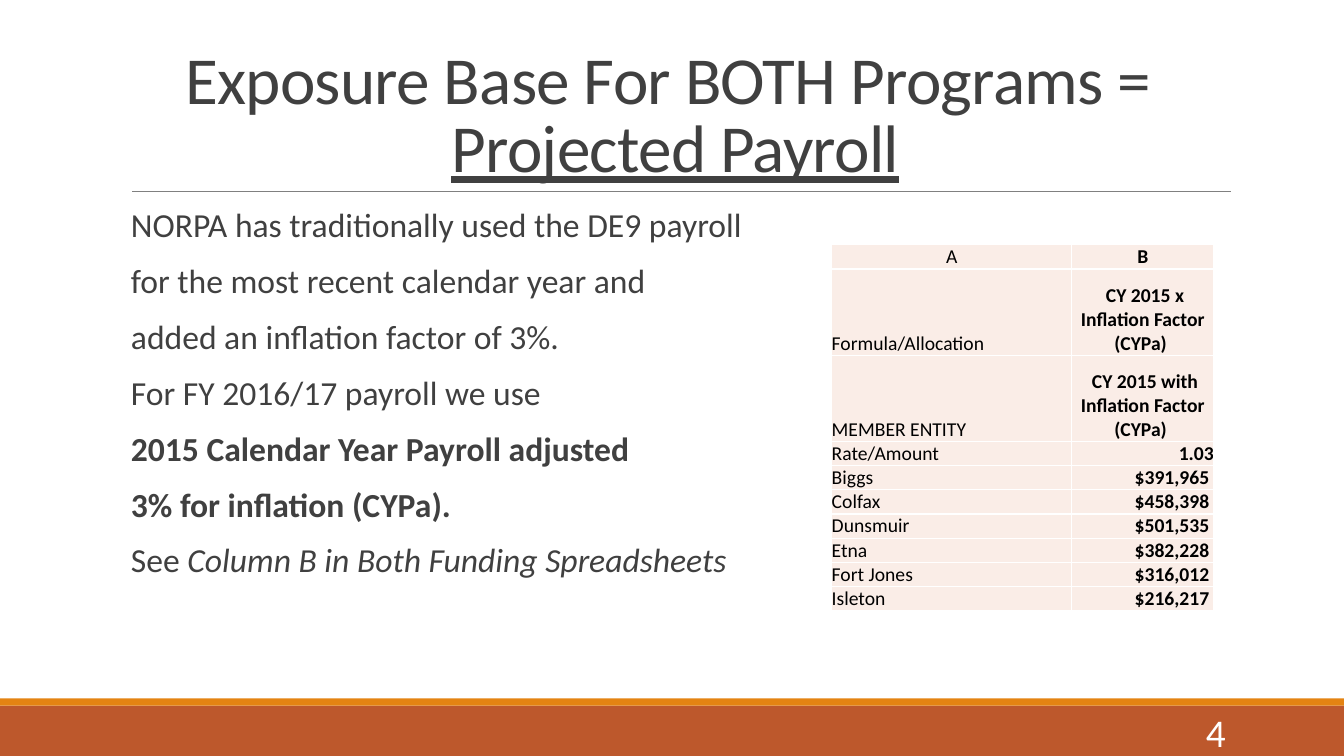
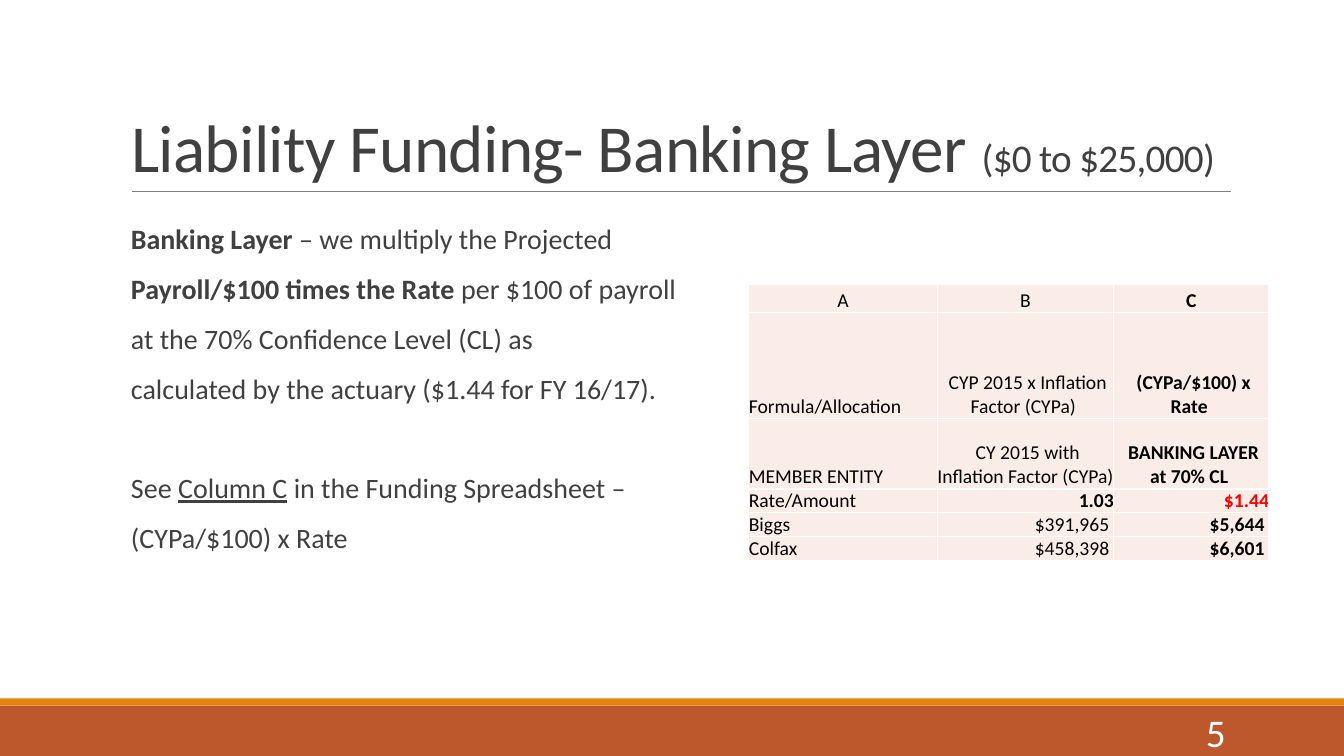
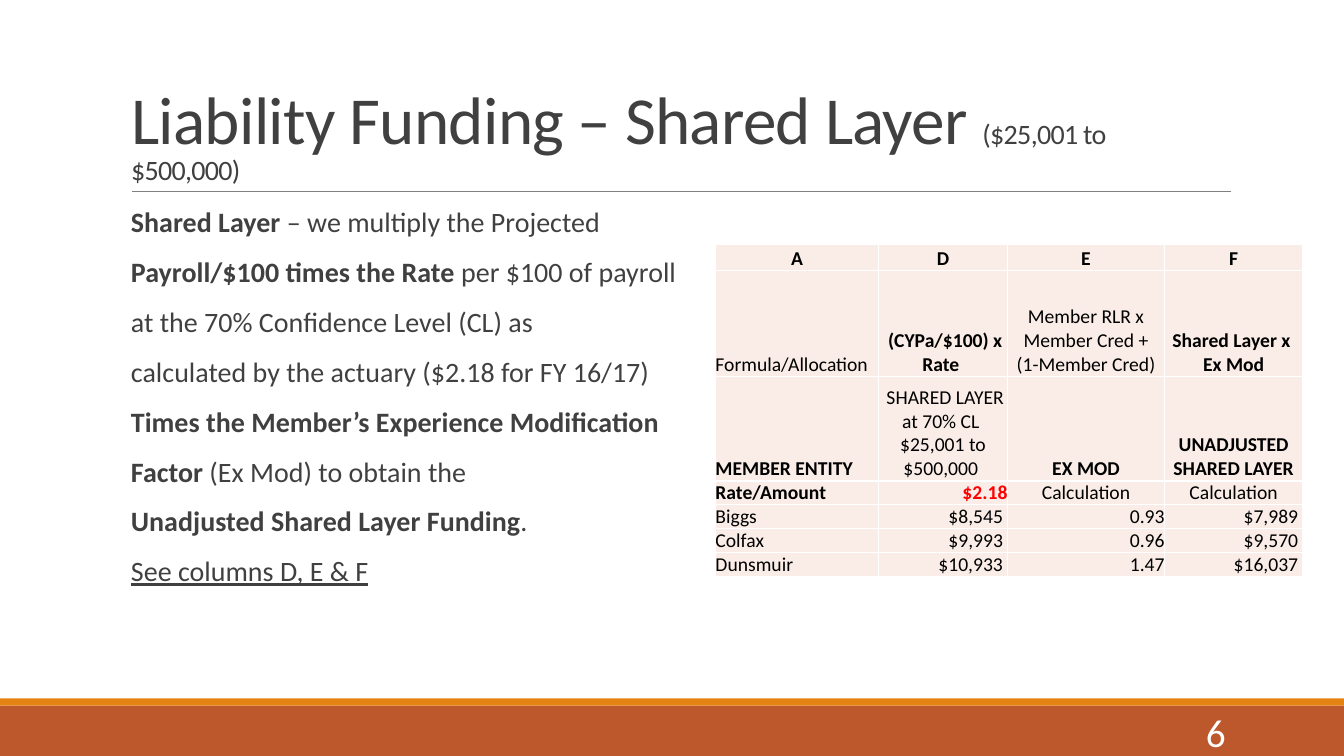
from lxml.etree import SubElement
from pptx import Presentation
from pptx.dml.color import RGBColor
from pptx.enum.shapes import MSO_CONNECTOR as Connector, MSO_SHAPE as Shape
from pptx.enum.text import MSO_ANCHOR as Anchor, MSO_AUTO_SIZE as AutoSize, PP_ALIGN as Align
from pptx.oxml.ns import qn
from pptx.util import Cm, Pt

FONT = "Calibri"
COLORS = {
    "text": "404040",
    "cell_text": "000000",
    "rate": "FF0000",
    "cell": "FAEDE7",
    "band": "BD582C",
    "accent": "E48312",
    "rule": "808080",
    "number": "FFFFFF",
}
FIRST_NUMBER = 4

DECK = [
    {
        "title": ["Exposure Base For BOTH Programs = ", "\v", ("Projected Payroll", "u")],
        "title_align": Align.CENTER,
        "body_top": 5.13,
        "body_size": 24,
        "body": [
            ["NORPA has traditionally used the DE9 payroll"],
            ["for the most recent calendar year and"],
            ["added an inflation factor of 3%."],
            ["For FY 2016/17 payroll we use"],
            [("2015 Calendar Year Payroll adjusted", "b")],
            [("3% for inflation (CYPa).", "b")],
            ["See ", ("Column B in Both Funding Spreadsheets", "i")],
        ],
        "table_at": (20.96, 6.17),
        "columns": [6.05, 3.58],
        "rows": [0.61, 2.18, 2.16] + [0.61] * 7,
        "cells": [
            ["A", (" B ", "b")],
            ["Formula/Allocation", (" CY 2015 x Inflation Factor (CYPa) ", "b")],
            ["MEMBER ENTITY", (" CY 2015 with Inflation Factor (CYPa) ", "b")],
            ["Rate/Amount", ("1.03", "b")],
            ["Biggs", ("$391,965 ", "b")],
            ["Colfax", ("$458,398 ", "b")],
            ["Dunsmuir", ("$501,535 ", "b")],
            ["Etna", ("$382,228 ", "b")],
            ["Fort Jones", ("$316,012 ", "b")],
            ["Isleton", ("$216,217 ", "b")],
        ],
    },
    {
        "title": ["Liability Funding- Banking Layer ", ("($0 to $25,000)", "", 28)],
        "title_align": Align.LEFT,
        "body_top": 5.56,
        "body_size": 20,
        "body": [
            [("Banking Layer ", "b"), "– we multiply the Projected"],
            [("Payroll/$100 times the Rate ", "b"), "per $100 of payroll"],
            ["at the 70% Confidence Level (CL) as"],
            ["calculated by the actuary ($1.44 for FY 16/17)."],
            ["See ", ("Column C", "u"), " in the Funding Spreadsheet –"],
            ["(CYPa/$100) x Rate"],
        ],
        "wide_gap_before": 4,
        "table_at": (18.87, 7.16),
        "columns": [4.75, 4.45, 3.91],
        "rows": [0.71, 2.67, 1.78] + [0.53] * 3,
        "cells": [
            ["A", " B ", (" C ", "b")],
            ["Formula/Allocation", " CYP 2015 x Inflation Factor (CYPa) ",
             (" (CYPa/$100) x Rate ", "b")],
            ["MEMBER ENTITY", " CY 2015 with Inflation Factor (CYPa) ",
             (" BANKING LAYER at 70% CL ", "b")],
            ["Rate/Amount", ("1.03", "b"), ("$1.44", "br")],
            ["Biggs", "$391,965 ", ("$5,644 ", "b")],
            ["Colfax", "$458,398 ", ("$6,601 ", "b")],
        ],
    },
    {
        "title": ["Liability Funding – Shared Layer ", ("($25,001 to $500,000)", "", 20)],
        "title_align": Align.LEFT,
        "body_top": 5.13,
        "body_size": 20,
        "body": [
            [("Shared Layer ", "b"), "– we multiply the Projected"],
            [("Payroll/$100 times the Rate ", "b"), "per $100 of payroll"],
            ["at the 70% Confidence Level (CL) as"],
            ["calculated by the actuary ($2.18 for FY 16/17)"],
            [("Times the Member’s Experience Modification", "b")],
            [("Factor ", "b"), "(Ex Mod) to obtain the"],
            [("Unadjusted Shared Layer Funding", "b"), "."],
            [("See columns D, E & F", "u")],
        ],
        "table_at": (18.03, 6.15),
        "columns": [4.11, 3.25, 3.96, 3.48],
        "rows": [0.66, 2.67, 2.64] + [0.53] * 4,
        "cells": [
            [("A", "b"), (" D ", "b"), (" E ", "b"), (" F ", "b")],
            ["Formula/Allocation", (" (CYPa/$100) x Rate ", "b"),
             "Member RLR x Member Cred +\n(1-Member Cred)", ("Shared Layer x \nEx Mod", "b")],
            [("MEMBER ENTITY", "b"), " SHARED LAYER at 70% CL \n$25,001 to $500,000 ",
             ("EX MOD", "b"), ("UNADJUSTED SHARED LAYER", "b")],
            [("Rate/Amount", "b"), ("$2.18", "br"), "Calculation", "Calculation"],
            ["Biggs", "$8,545 ", "0.93", "$7,989 "],
            ["Colfax", "$9,993 ", "0.96", "$9,570 "],
            ["Dunsmuir", "$10,933 ", "1.47", "$16,037 "],
        ],
    },
]


def color(name):
    return RGBColor.from_string(COLORS[name])


def place(shape, left, top, width, height):
    shape.left, shape.top, shape.width, shape.height = map(Cm, (left, top, width, height))


def split_style(part):
    return (part, "") if isinstance(part, str) else part


def style_font(font, size, color_name, flags=""):
    font.name = FONT
    font.size = Pt(size)
    font.bold = "b" in flags
    font.italic = "i" in flags
    font.underline = "u" in flags
    font.color.rgb = color("rate" if "r" in flags else color_name)


def write_parts(paragraph, parts, size):
    for part in parts:
        if part == "\v":
            paragraph.add_line_break()
            continue
        text, flags, *own_size = split_style(part)
        run = paragraph.add_run()
        run.text = text
        style_font(run.font, own_size[0] if own_size else size, "text", flags)


def add_band(slide, top, height, color_name):
    band = slide.shapes.add_shape(Shape.RECTANGLE, 0, Cm(top), Cm(33.87), Cm(height))
    band.shadow.inherit = False
    band.fill.solid()
    band.fill.fore_color.rgb = color(color_name)
    band.line.fill.background()
    return band


def add_title_rule(slide):
    rule = slide.shapes.add_connector(Connector.STRAIGHT, Cm(3.33), Cm(4.83), Cm(31.01), Cm(4.83))
    rule.line.color.rgb = color("rule")
    rule.line.width = Pt(0.5)
    SubElement(rule.element.spPr, qn("a:effectLst"))
    return rule


def move_frame_to_layout(slide, layout):
    for placeholder in list(layout.placeholders):
        if placeholder.placeholder_format.idx >= 10:
            placeholder.element.getparent().remove(placeholder.element)
    frame = [
        add_band(slide, 17.78, 1.27, "band"),
        add_band(slide, 17.6, 0.18, "accent"),
        add_title_rule(slide),
    ]
    for part in frame:
        layout.shapes.element.append(part.element)


def fill_title(title, parts, alignment):
    place(title, 3.05, 0.79, 27.94, 4.04)
    text = title.text_frame
    text.word_wrap = True
    text.auto_size = AutoSize.NONE
    text.vertical_anchor = Anchor.BOTTOM
    heading = text.paragraphs[0]
    heading.alignment = alignment
    heading.line_spacing = 0.85
    write_parts(heading, parts, 48)
    for run in heading.runs:
        run.font._element.set("spc", "-50")


def set_blank_bullet(paragraph):
    properties = paragraph._p.get_or_add_pPr()
    properties.set("marL", str(Cm(0.25)))
    properties.set("indent", str(-Cm(0.25)))
    bullet_color = SubElement(properties, qn("a:buClr"))
    SubElement(bullet_color, qn("a:srgbClr"), val=COLORS["accent"])
    SubElement(properties, qn("a:buChar"), char=" ")


def fill_body(body, lines, top, size, wide_gap_before):
    place(body, 3.05, top, 27.94, 11.18)
    text = body.text_frame
    text.word_wrap = True
    text.auto_size = AutoSize.NONE
    text.vertical_anchor = Anchor.TOP
    text.margin_left = text.margin_right = 0
    for index, parts in enumerate(lines):
        line = text.add_paragraph() if index else text.paragraphs[0]
        line.alignment = Align.LEFT
        line.line_spacing = 0.9
        line.space_before = Pt(47.5 if index == wide_gap_before else 12)
        line.space_after = Pt(2)
        set_blank_bullet(line)
        write_parts(line, parts, size)


def cell_alignment(row, column, text):
    if row == 0:
        return Align.CENTER
    if column == 0:
        return Align.LEFT
    return Align.RIGHT if row >= 3 and not text.isalpha() else Align.CENTER


def fill_cell(cell, row, column, content):
    text, flags = split_style(content)
    cell.fill.solid()
    cell.fill.fore_color.rgb = color("cell")
    cell.vertical_anchor = Anchor.BOTTOM
    cell.margin_left = cell.margin_right = cell.margin_top = cell.margin_bottom = 0
    cell.text_frame.text = text
    for paragraph in cell.text_frame.paragraphs:
        paragraph.alignment = cell_alignment(row, column, text)
        for run in paragraph.runs:
            style_font(run.font, 14, "cell_text", flags)


def add_funding_table(slide, at, columns, rows, cells):
    left, top = map(Cm, at)
    table = slide.shapes.add_table(
        len(rows), len(columns), left, top, Cm(sum(columns)), Cm(sum(rows))
    ).table
    table.first_row = table.horz_banding = False
    for column, width in zip(table.columns, columns):
        column.width = Cm(width)
    for row, height in zip(table.rows, rows):
        row.height = Cm(height)
    for r, contents in enumerate(cells):
        for c, content in enumerate(contents):
            fill_cell(table.cell(r, c), r, c, content)


def add_page_number(slide, number):
    text = slide.shapes.add_textbox(Cm(27.51), Cm(17.93), Cm(3.63), Cm(1.02)).text_frame
    text.word_wrap = True
    text.vertical_anchor = Anchor.MIDDLE
    text.text = str(number)
    text.paragraphs[0].alignment = Align.RIGHT
    style_font(text.paragraphs[0].runs[0].font, 28, "number")


def main():
    prs = Presentation()
    prs.slide_width, prs.slide_height = Cm(33.87), Cm(19.05)
    layout = prs.slide_layouts[1]
    slides = [prs.slides.add_slide(layout) for _ in DECK]
    move_frame_to_layout(slides[0], layout)
    for number, (slide, page) in enumerate(zip(slides, DECK), FIRST_NUMBER):
        fill_title(slide.shapes.title, page["title"], page["title_align"])
        fill_body(slide.placeholders[1], page["body"], page["body_top"],
                  page["body_size"], page.get("wide_gap_before"))
        add_funding_table(slide, page["table_at"], page["columns"], page["rows"], page["cells"])
        add_page_number(slide, number)
    prs.save("out.pptx")


if __name__ == "__main__":
    main()
